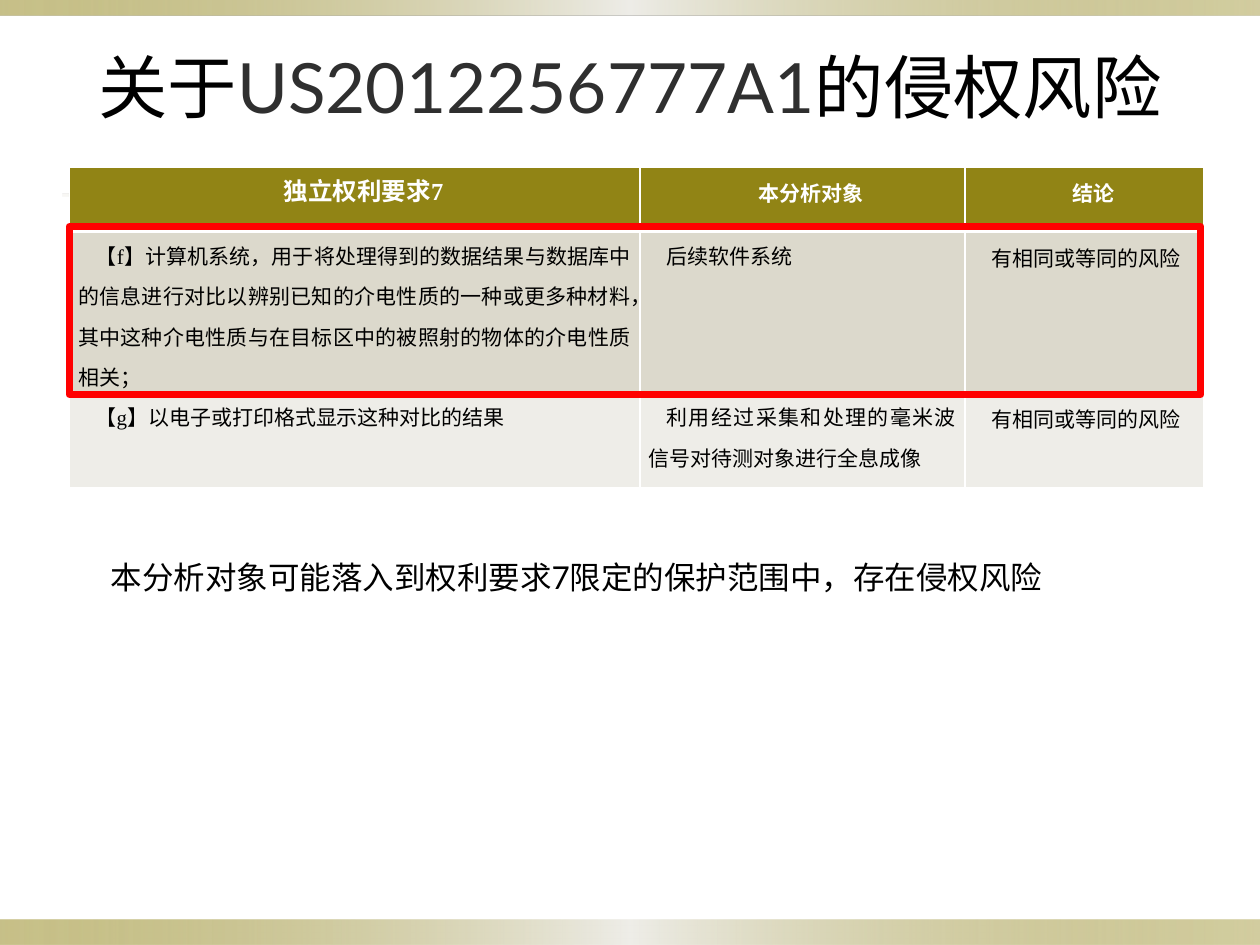
from lxml import etree
from pptx import Presentation
from pptx.dml.color import RGBColor
from pptx.enum.shapes import MSO_SHAPE
from pptx.enum.text import MSO_ANCHOR, PP_ALIGN
from pptx.oxml import parse_xml
from pptx.oxml.ns import nsdecls, qn
from pptx.util import Inches, Pt

RECT = MSO_SHAPE.RECTANGLE
TOP = MSO_ANCHOR.TOP
CENTER, JUSTIFY, LEFT = PP_ALIGN.CENTER, PP_ALIGN.JUSTIFY, PP_ALIGN.LEFT

HUES = {"black": "000000", "gray": "2F2F2F", "white": "FFFFFF",
        "olive": "918415", "sand": "DCD9CC", "pale": "EEEDE8",
        "red": "FF0000"}
SERIF, SANS = "Times New Roman", "Lato"

TITLE = [("关于", SERIF, "black"), ("US2012256777A1", SANS, "gray"),
         ("的侵权风险", SERIF, "black")]
ROWS = [
    ("独立权利要求7", "本分析对象", "结论"),
    ("【f】计算机系统，用于将处理得到的数据结果与数据库中的信息进行对比以辨别已知的介电性质的一种或更多种材料，其中这种介电性质与在目标区中的被照射的物体的介电性质相关；",
     "后续软件系统", "有相同或等同的风险"),
    ("【g】以电子或打印格式显示这种对比的结果",
     "利用经过采集和处理的毫米波信号对待测对象进行全息成像", "有相同或等同的风险"),
]
NOTE = "本分析对象可能落入到权利要求7限定的保护范围中，存在侵权风险"
WIDTHS = [4.53, 2.58, 1.89]
HEIGHTS = [0.5, 1.28, 0.76]
FILLS = ["olive", "sand", "pale"]

EDGE = [(0, "olive", 50), (50, "pale", 100), (100, "olive", 40)]
RULE = [(0, "sand", 20), (50, "olive", 40), (100, "sand", 50)]
BARS = [((0, 7.3, 10, 0.2), EDGE), ((0, 0, 10, 0.12), EDGE),
        ((0.5, 1.54, 9, 0.02), RULE)]


def color(name):
    return RGBColor.from_string(HUES[name])


def style(font, face, size, hue, bold=False):
    font.name, font.size, font.bold = face, Pt(size), bold
    font.color.rgb = color(hue)


def add_rect(slide, box):
    shape = slide.shapes.add_shape(RECT, *map(Inches, box))
    shape.shadow.inherit = False
    return shape


def add_bar(slide, box, stops):
    bar = add_rect(slide, box)
    bar.line.fill.background()
    bar.fill.gradient()
    bar.fill.gradient_angle = 0
    items = bar._element.spPr.find(qn("a:gradFill")).find(qn("a:gsLst"))
    for item in list(items):
        items.remove(item)
    for pos, hue, alpha in stops:
        items.append(parse_xml(
            f'<a:gs {nsdecls("a")} pos="{pos * 1000}"><a:srgbClr val="{HUES[hue]}">'
            f'<a:alpha val="{alpha * 1000}"/></a:srgbClr></a:gs>'))


def add_edges(cell, head):
    props = cell._tc.get_or_add_tcPr()
    for side in "LRTB":
        width = Pt(3 if head and side == "B" else 1)
        line = etree.SubElement(props, qn(f"a:ln{side}"), w=str(width))
        fill = etree.SubElement(line, qn("a:solidFill"))
        etree.SubElement(fill, qn("a:srgbClr"), val=HUES["white"])


def fill_cell(cell, text, row, col):
    head = row == 0
    add_edges(cell, head)
    cell.fill.solid()
    cell.fill.fore_color.rgb = color(FILLS[row])
    cell.margin_left = cell.margin_right = Inches(0.07)
    cell.margin_top = cell.margin_bottom = 0
    cell.text = text
    para = cell.text_frame.paragraphs[0]
    para.alignment = CENTER if head else JUSTIFY
    para.line_spacing = Pt(24 if col == 2 and not head else 23)
    para._p.get_or_add_pPr().set("indent", str(Inches(0.14)))
    style(para.font, SERIF, 14 if head and col == 0 else 12,
          "white" if head else "black", head)


def add_grid(slide):
    frame = slide.shapes.add_table(
        len(ROWS), len(WIDTHS), Inches(0.55), Inches(1.33),
        Inches(sum(WIDTHS)), Inches(sum(HEIGHTS)))
    table = frame.table
    for col, width in zip(table.columns, WIDTHS):
        col.width = Inches(width)
    for i, texts in enumerate(ROWS):
        table.rows[i].height = Inches(HEIGHTS[i])
        for j, text in enumerate(texts):
            fill_cell(table.cell(i, j), text, i, j)


def add_title(slide):
    title = slide.shapes.title
    title.left, title.top, title.width, title.height = map(
        Inches, (0.5, 0.3, 9, 1.25))
    title.text_frame.vertical_anchor = TOP
    para = title.text_frame.paragraphs[0]
    para.alignment = CENTER
    for text, face, hue in TITLE:
        run = para.add_run()
        run.text = text
        style(run.font, face, 39.6, hue)


def add_note(slide):
    box = slide.shapes.add_textbox(*map(Inches, (0.78, 4.38, 8.52, 0.4)))
    box.text_frame.word_wrap = True
    para = box.text_frame.paragraphs[0]
    para.text = NOTE
    para.alignment = LEFT
    style(para.font, SANS, 18, "black")


def main():
    deck = Presentation()
    deck.slide_width, deck.slide_height = Inches(10), Inches(7.5)
    slide = deck.slides.add_slide(deck.slide_layouts[5])
    for box, stops in BARS:
        add_bar(slide, box, stops)
    add_title(slide)
    add_grid(slide)
    add_note(slide)
    mark = add_rect(slide, (0.55, 1.8, 8.98, 1.33))
    mark.fill.background()
    mark.line.color.rgb = color("red")
    mark.line.width = Pt(4.25)
    deck.save("out.pptx")


if __name__ == "__main__":
    main()
